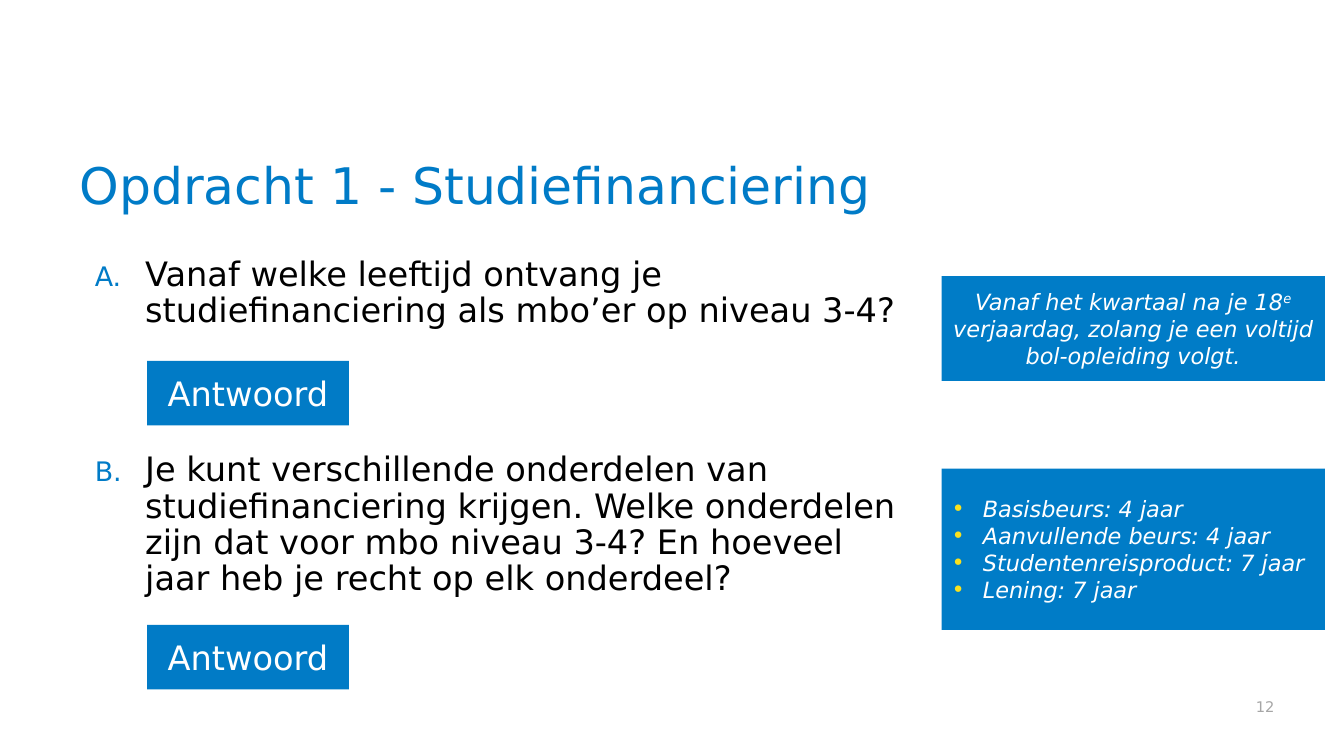
from dataclasses import dataclass

from lxml.etree import SubElement
from pptx import Presentation
from pptx.dml.color import RGBColor
from pptx.enum.shapes import MSO_SHAPE
from pptx.enum.text import MSO_ANCHOR, MSO_AUTO_SIZE, PP_ALIGN
from pptx.oxml.ns import qn
from pptx.shapes.base import BaseShape
from pptx.text.text import TextFrame, _Paragraph
from pptx.util import Inches, Pt

FONT = "DejaVu Sans"
BLUE = "007BC7"
WHITE = "FFFFFF"
YELLOW = "F9E11E"


@dataclass
class Box:
    left: float
    top: float
    width: float
    height: float
    size: float
    lines: list[str]
    fill: str = BLUE
    italic: bool = False
    bullets: bool = False


QUESTIONS = [
    "Vanaf welke leeftijd ontvang je studiefinanciering als mbo’er op niveau 3-4?",
    "Je kunt verschillende onderdelen van studiefinanciering krijgen. Welke onderdelen "
    "zijn dat voor mbo niveau 3-4? En hoeveel jaar heb je recht op elk onderdeel?",
]
BUTTONS = [Box(1.46, top, 2, 0.64, 24, ["Antwoord"], "017BC6") for top in (3.58, 6.2)]
PARTS = Box(9.34, 4.65, 3.8, 1.6, 16, [
    "Basisbeurs: 4 jaar",
    "Aanvullende beurs: 4 jaar",
    "Studentenreisproduct: 7 jaar",
    "Lening: 7 jaar",
], "007CC7", italic=True, bullets=True)
AGE = Box(9.34, 2.74, 3.8, 1.04, 16, ["Vanaf het kwartaal na je 18"], "007CC7", italic=True)


def color(value: str) -> RGBColor:
    return RGBColor.from_string(value)


def place(shape: BaseShape, left: float, top: float, width: float, height: float) -> None:
    shape.left, shape.top = Inches(left), Inches(top)
    shape.width, shape.height = Inches(width), Inches(height)


def style(frame: TextFrame, size: float, hue: str, italic: bool = False) -> None:
    """Format every run in the frame."""
    for para in frame.paragraphs:
        for run in para.runs:
            font = run.font
            font.name, font.size, font.italic = FONT, Pt(size), italic
            font.color.rgb = color(hue)


def mark(para: _Paragraph, indent: float, hang: float, hue: str,
         scale: int, kind: str, **attrs: str) -> None:
    """Add a hanging bullet or number to a paragraph."""
    props = para._p.get_or_add_pPr()
    props.set("marL", str(Inches(indent)))
    props.set("indent", str(-Inches(hang)))
    SubElement(SubElement(props, qn("a:buClr")), qn("a:srgbClr"), val=hue)
    SubElement(props, qn("a:buSzPct"), val=str(scale * 1000))
    SubElement(props, qn("a:buFont"), typeface=FONT)
    SubElement(props, qn(kind), **attrs)


def draw(shapes, box: Box) -> TextFrame:
    shape = shapes.add_shape(MSO_SHAPE.RECTANGLE, 0, 0, 0, 0)
    place(shape, box.left, box.top, box.width, box.height)
    shape.shadow.inherit = False
    shape.fill.solid()
    shape.fill.fore_color.rgb = color(box.fill)
    shape.line.fill.background()
    frame = shape.text_frame
    frame.word_wrap = True
    frame.vertical_anchor = MSO_ANCHOR.MIDDLE
    frame.text = "\n".join(box.lines)
    for para in frame.paragraphs:
        para.alignment = PP_ALIGN.LEFT if box.bullets else PP_ALIGN.CENTER
        if box.bullets:
            mark(para, 0.31, 0.31, YELLOW, 100, "a:buChar", char="•")
    style(frame, box.size, WHITE, box.italic)
    return frame


def main() -> None:
    deck = Presentation()
    deck.slide_width, deck.slide_height = Inches(13.33), Inches(7.5)
    slide = deck.slides.add_slide(deck.slide_layouts[1])
    shapes = slide.shapes

    title = shapes.title
    place(title, 0.69, 1.15, 11.95, 1.04)
    head = title.text_frame
    head.text = "Opdracht 1 - Studiefinanciering"
    head.auto_size = MSO_AUTO_SIZE.NONE
    head.vertical_anchor = MSO_ANCHOR.BOTTOM
    head.paragraphs[0].alignment = PP_ALIGN.LEFT
    head.paragraphs[0].line_spacing = 0.9
    style(head, 36, BLUE)

    body = slide.placeholders[1]
    place(body, 0.69, 2.5, 8.36, 4.3)
    tasks = body.text_frame
    tasks.text = "\n".join(QUESTIONS)
    tasks.auto_size = MSO_AUTO_SIZE.NONE
    for para, gap in zip(tasks.paragraphs, (0, 88)):
        mark(para, 0.65, 0.5, BLUE, 80, "a:buAutoNum", type="alphaUcPeriod")
        para.line_spacing = 0.9
        para.space_before = Pt(gap)
    style(tasks, 24, "000000")

    number = shapes.add_textbox(0, 0, 0, 0)
    place(number, 7.17, 6.8, 5.47, 0.35)
    foot = number.text_frame
    foot.text = "12"
    foot.word_wrap = True
    foot.margin_right = 0
    foot.vertical_anchor = MSO_ANCHOR.BOTTOM
    foot.paragraphs[0].alignment = PP_ALIGN.RIGHT
    style(foot, 10.5, "A6A6A6")

    for box in (*BUTTONS, PARTS):
        draw(shapes, box)

    answer = draw(shapes, AGE)
    para = answer.paragraphs[0]
    raised, rest = para.add_run(), para.add_run()
    raised.text = "e"
    rest.text = " verjaardag, zolang je een voltijd bol-opleiding volgt."
    style(answer, AGE.size, WHITE, AGE.italic)
    raised._r.get_or_add_rPr().set("baseline", "30000")

    deck.save("out.pptx")


if __name__ == "__main__":
    main()
